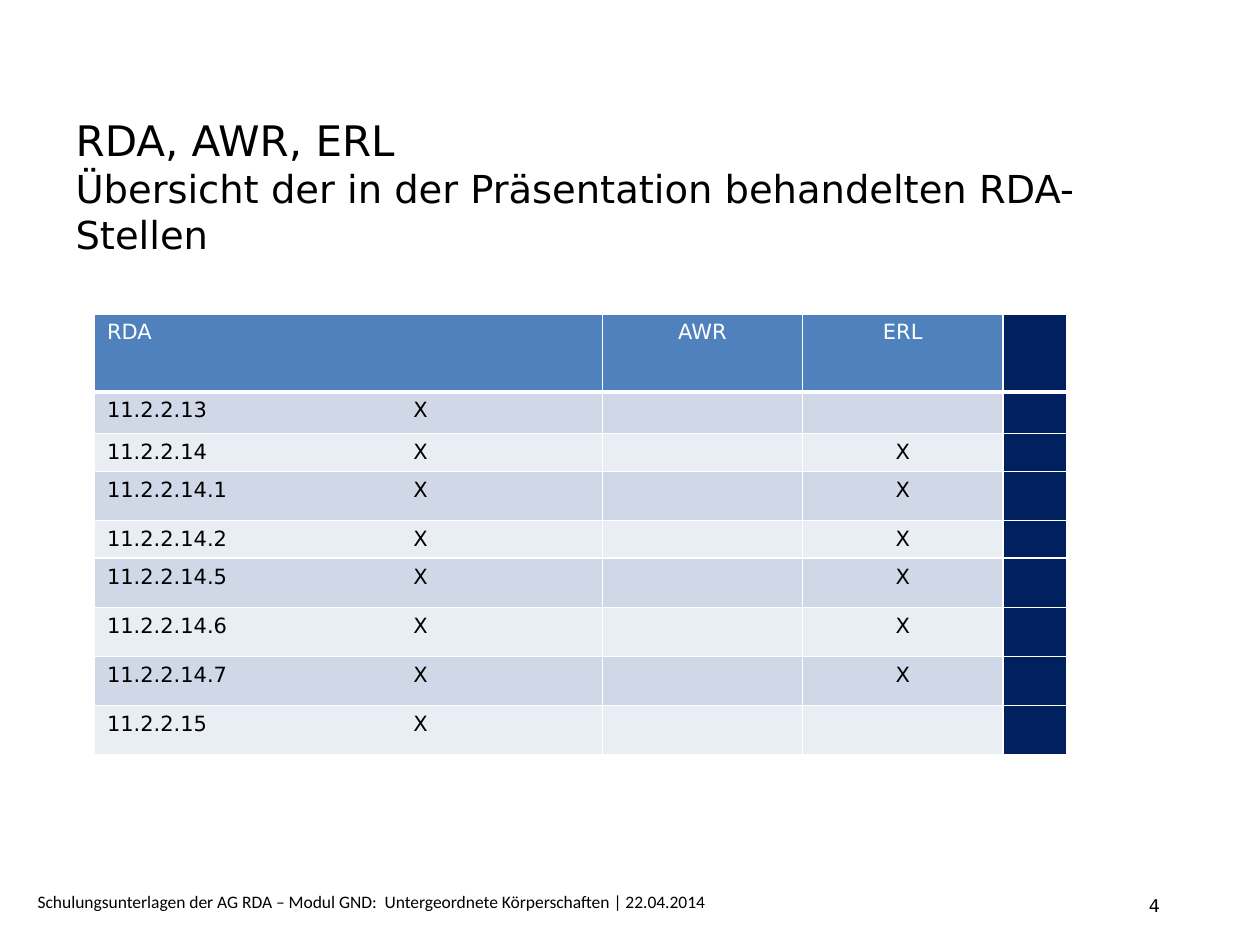
import pptx
import pptx.dml.color
import pptx.enum.text
import pptx.oxml
import pptx.oxml.ns
import pptx.util
from lxml import etree

ALIGN = pptx.enum.text.PP_ALIGN
WIDTH, HEIGHT = pptx.util.Inches(10), pptx.util.Inches(7.5)
WHITE, BLACK = "FFFFFF", "000000"
HEADER, MARGIN = "4F81BD", "002060"
BANDS = ["D0D8E8", "E9EDF4"]


def color(value):
    return pptx.dml.color.RGBColor.from_string(value)


def style(paragraph, size, value=BLACK, face="DejaVu Sans", align=ALIGN.LEFT):
    paragraph.alignment = align
    paragraph.font.name = face
    paragraph.font.size = pptx.util.Pt(size)
    paragraph.font.bold = False
    paragraph.font.color.rgb = color(value)


deck = pptx.Presentation()
deck.slide_width, deck.slide_height = WIDTH, HEIGHT
slide = deck.slides.add_slide(deck.slide_layouts[5])

title = slide.shapes.title
title.left, title.top = int(WIDTH * 0.05), int(HEIGHT * 0.1133)
title.width, title.height = int(WIDTH * 0.9), int(HEIGHT * 0.1667)
title.text_frame.word_wrap = True
title.text_frame.auto_size = pptx.enum.text.MSO_AUTO_SIZE.NONE
title.text_frame.vertical_anchor = pptx.enum.text.MSO_ANCHOR.MIDDLE
heading = title.text_frame.paragraphs[0]
style(heading, 22)
topic = heading.add_run()
topic.text = "RDA, AWR, ERL"
topic.font.size = pptx.util.Pt(24)
heading.add_line_break()
heading.add_run().text = "Übersicht der in der Präsentation behandelten RDA-Stellen"

footers = [
    ("Schulungsunterlagen der AG RDA – Modul GND:  Untergeordnete Körperschaften | 22.04.2014",
     "Calibri", 0.02, 0.936, 0.721, 0.036),
    ("4", "DejaVu Sans", 0.902, 0.94, 0.079, 0.043),
]
for words, face, left, top, width, height in footers:
    footer = slide.shapes.add_textbox(int(WIDTH * left), int(HEIGHT * top),
                                      int(WIDTH * width), int(HEIGHT * height))
    footer.text_frame.word_wrap = True
    footer.text_frame.text = words
    style(footer.text_frame.paragraphs[0], 10, face=face)

rows = [("RDA", "AWR", "ERL", "")]
for section, explained in [("13", ""), ("14", "X"), ("14.1", "X"), ("14.2", "X"),
                           ("14.5", "X"), ("14.6", "X"), ("14.7", "X"), ("15", "")]:
    rows.append((f"11.2.2.{section}\tX", "", explained, ""))
column_widths = [4.03, 1.59, 1.59, 0.51]
row_heights = [0.62, 0.33, 0.28, 0.39, 0.3] + [0.39] * 4

overview = slide.shapes.add_table(
    len(rows), len(column_widths), int(WIDTH * 0.075), int(HEIGHT * 0.332),
    pptx.util.Inches(sum(column_widths)), pptx.util.Inches(sum(row_heights))).table
for column, width in zip(overview.columns, column_widths):
    column.width = pptx.util.Inches(width)
for row, height in zip(overview.rows, row_heights):
    row.height = pptx.util.Inches(height)

for r, entries in enumerate(rows):
    for c, entry in enumerate(entries):
        cell = overview.cell(r, c)
        cell.text = entry
        paragraph = cell.text_frame.paragraphs[0]
        if "\t" in entry:
            stops = etree.SubElement(paragraph._p.get_or_add_pPr(), pptx.oxml.ns.qn("a:tabLst"))
            etree.SubElement(stops, pptx.oxml.ns.qn("a:tab"),
                             pos=str(pptx.util.Inches(2.43)), algn="l")
        style(paragraph, 12, BLACK if r else WHITE, align=ALIGN.CENTER if c else ALIGN.LEFT)
        properties = cell._tc.get_or_add_tcPr()
        for side in ["lnL", "lnR", "lnT", "lnB"]:
            points = 3 if r == 0 and side == "lnB" else 1
            border = etree.SubElement(properties, pptx.oxml.ns.qn(f"a:{side}"),
                                      w=str(pptx.util.Pt(points)))
            paint = etree.SubElement(border, pptx.oxml.ns.qn("a:solidFill"))
            etree.SubElement(paint, pptx.oxml.ns.qn("a:srgbClr"), val=WHITE)
        cell.fill.solid()
        body = BANDS[(r - 1) % 2] if r else HEADER
        cell.fill.fore_color.rgb = color(MARGIN if c == 3 else body)

deck.save("out.pptx")
